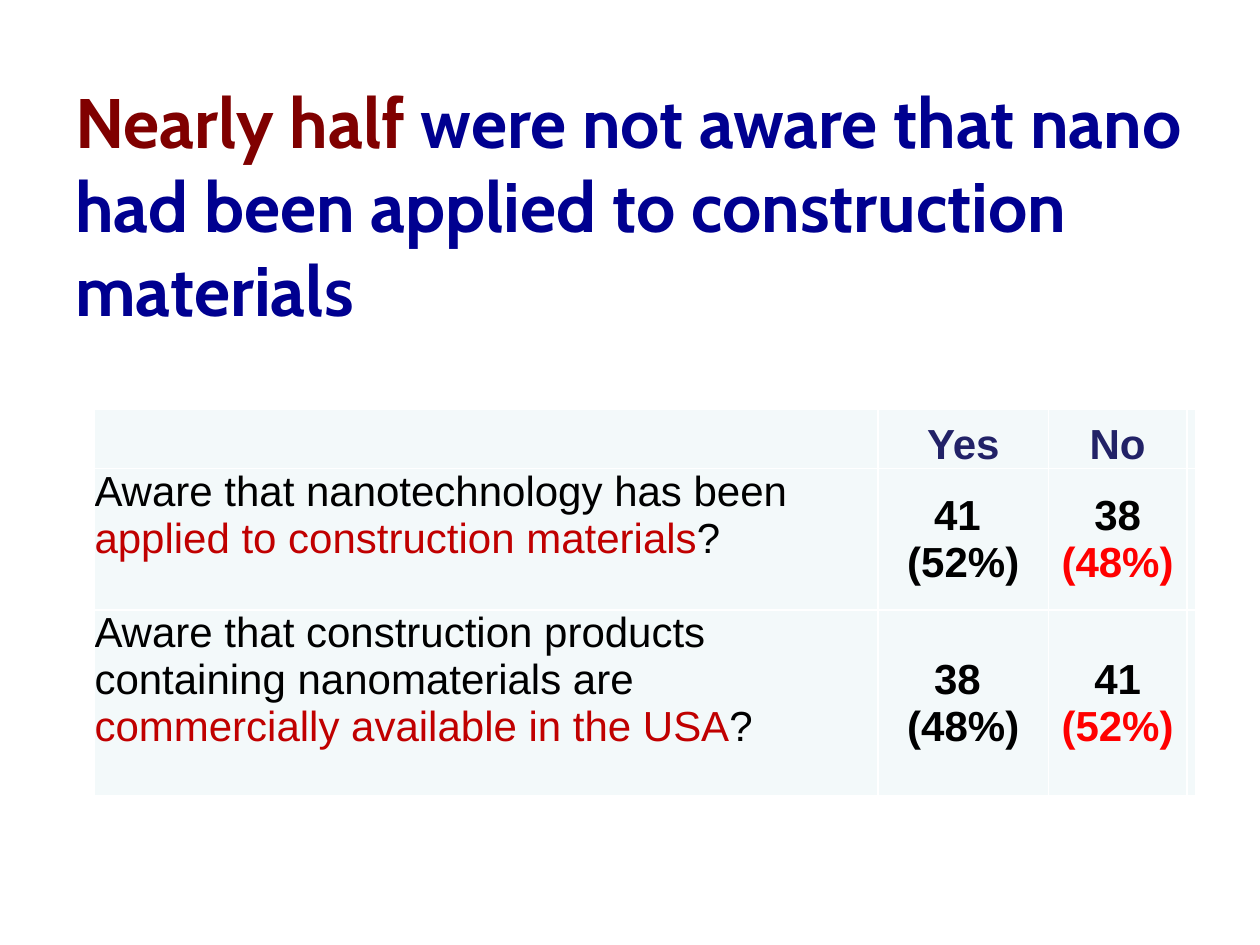
"""Build a slide with a survey table on awareness of nanotechnology in construction."""
from lxml import etree
from pptx import Presentation
from pptx.dml.color import RGBColor
from pptx.enum.text import MSO_ANCHOR, PP_ALIGN
from pptx.oxml.ns import qn
from pptx.util import Inches, Pt

LEFT, CENTER = PP_ALIGN.LEFT, PP_ALIGN.CENTER
TOP, MIDDLE, BOTTOM = MSO_ANCHOR.TOP, MSO_ANCHOR.MIDDLE, MSO_ANCHOR.BOTTOM
BLACK, WHITE, CELL_FILL = "000000", "FFFFFF", "F3F9FA"
HEADER_COLOR, TOPIC_COLOR, NO_COLOR = "222267", "C00000", "FF0000"

HEADLINE = [[("Nearly half", "800000"),
             (" were not aware that nano had been applied to construction materials", "000090")]]
ANSWERS = ["Yes", "No"]
QUESTIONS = [
    ("Aware that nanotechnology has been ", "applied to construction materials",
     ("41 ", "(52%)"), ("38 ", "(48%)")),
    ("Aware that construction products containing nanomaterials are ",
     "commercially available in the USA", ("38 ", "(48%)"), ("41 ", "(52%)")),
]
COLUMN_WIDTHS = [6.22, 1.35, 1.1, 0.07]
ROW_HEIGHTS = [0.47, 1.12, 1.48]


def rgb(value):
    return RGBColor.from_string(value)


def write_text(frame, paragraphs, size=24, font="Arial", bold=False, align=LEFT):
    for number, runs in enumerate(paragraphs):
        paragraph = frame.add_paragraph() if number else frame.paragraphs[0]
        paragraph.alignment = align
        for words, color in runs:
            run = paragraph.add_run()
            run.text = words
            run.font.name, run.font.size, run.font.bold = font, Pt(size), bold
            run.font.color.rgb = rgb(color)


def style_cell(cell, anchor):
    cell.margin_left = cell.margin_right = cell.margin_top = cell.margin_bottom = 0
    cell.vertical_anchor = anchor
    cell.fill.solid()
    cell.fill.fore_color.rgb = rgb(CELL_FILL)
    properties = cell._tc.get_or_add_tcPr()
    for position, side in enumerate(("a:lnL", "a:lnR", "a:lnT", "a:lnB")):
        border = etree.Element(qn(side), w=str(Pt(1)))
        solid = etree.SubElement(border, qn("a:solidFill"))
        etree.SubElement(solid, qn("a:srgbClr"), val=WHITE)
        properties.insert(position, border)


def add_headline(slide):
    headline = slide.shapes.add_textbox(Inches(0.5), Inches(1), Inches(9), Inches(1.25))
    headline.text_frame.word_wrap = True
    headline.text_frame.vertical_anchor = MIDDLE
    write_text(headline.text_frame, HEADLINE, size=40, font="Cabin", bold=True)


def add_survey(slide):
    survey = slide.shapes.add_table(
        len(ROW_HEIGHTS), len(COLUMN_WIDTHS), Inches(0.75), Inches(3.25),
        Inches(sum(COLUMN_WIDTHS)), Inches(sum(ROW_HEIGHTS))).table
    survey.first_row = survey.horz_banding = False
    for column, width in zip(survey.columns, COLUMN_WIDTHS):
        column.width = Inches(width)
    for row, height in zip(survey.rows, ROW_HEIGHTS):
        row.height = Inches(height)
    for row in range(len(ROW_HEIGHTS)):
        for column in range(len(COLUMN_WIDTHS)):
            anchor = BOTTOM if row == 0 else MIDDLE if column else TOP
            style_cell(survey.cell(row, column), anchor)

    for column, answer in enumerate(ANSWERS, 1):
        write_text(survey.cell(0, column).text_frame, [[(answer, HEADER_COLOR)]],
                   bold=True, align=CENTER)
    for row, (opening, topic, yes, no) in enumerate(QUESTIONS, 1):
        question = [[(opening, BLACK), (topic, TOPIC_COLOR), ("?", BLACK)]]
        yes_lines = [[(words, BLACK)] for words in yes]
        no_line = [list(zip(no, (BLACK, NO_COLOR)))]
        write_text(survey.cell(row, 0).text_frame, question)
        for column, result in enumerate((yes_lines, no_line), 1):
            write_text(survey.cell(row, column).text_frame, result, bold=True, align=CENTER)


def main():
    deck = Presentation()
    deck.slide_width, deck.slide_height = Inches(10), Inches(7.5)
    slide = deck.slides.add_slide(deck.slide_layouts[6])
    add_headline(slide)
    add_survey(slide)
    deck.save("out.pptx")


if __name__ == "__main__":
    main()
